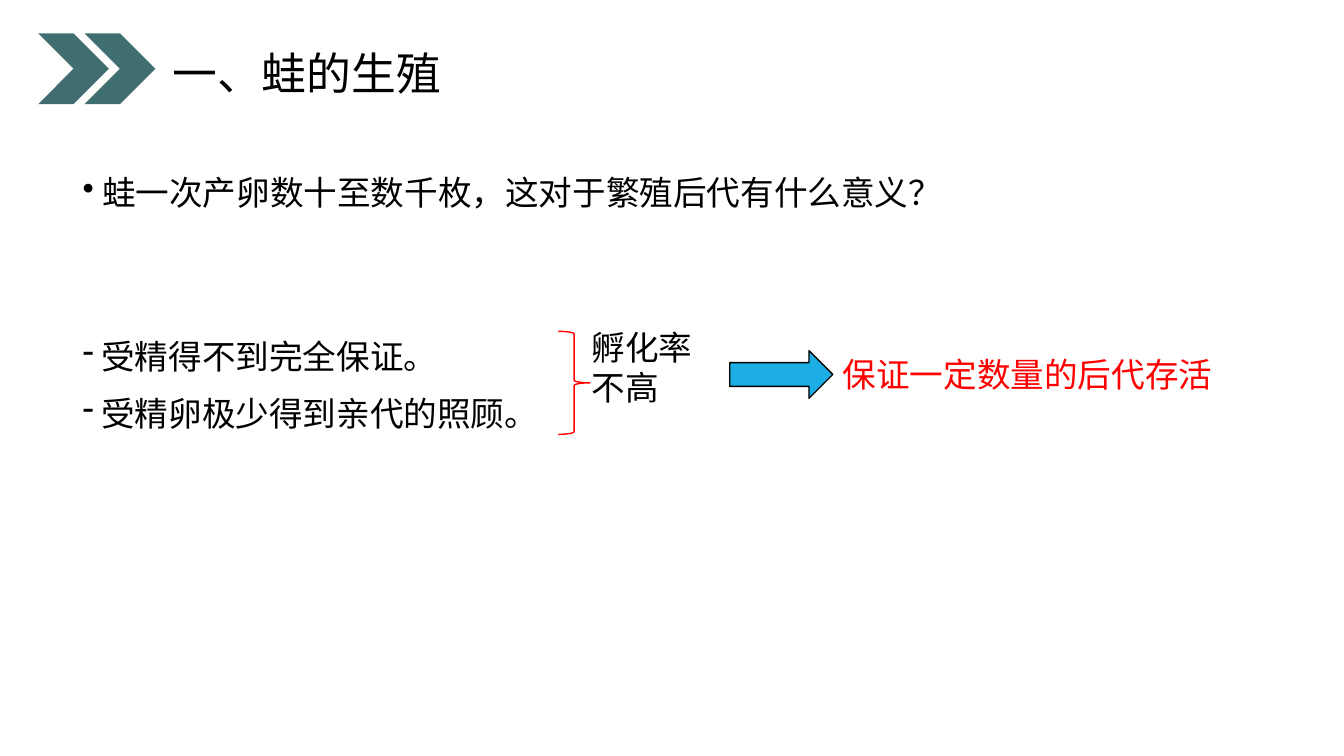
from lxml.etree import SubElement
from pptx import Presentation
from pptx.dml.color import RGBColor
from pptx.enum.shapes import MSO_SHAPE
from pptx.enum.text import MSO_AUTO_SIZE, PP_ALIGN
from pptx.oxml.ns import qn
from pptx.util import Pt

BLACK, RED, TEAL, BLUE = "000000", "FF0000", "416E71", "1CADE4"


def color(value):
    return RGBColor.from_string(value)


def add_outline(slide, kind, box, fill=None, line=None):
    """Add a preset shape; a missing fill or line stays empty."""
    shape = slide.shapes.add_shape(kind, *map(Pt, box))
    shape.shadow.inherit = False
    if fill:
        shape.fill.solid()
        shape.fill.fore_color.rgb = color(fill)
    else:
        shape.fill.background()
    if line:
        shape.line.color.rgb = color(line)
        shape.line.width = Pt(1)
    else:
        shape.line.fill.background()
    return shape


def add_text(slide, box, lines, size=24, ink=BLACK, bullet=None, gap=0, wrap=True):
    """Add one paragraph per line, with gap points between paragraphs."""
    frame = slide.shapes.add_textbox(*map(Pt, box)).text_frame
    frame.word_wrap = wrap
    frame.auto_size = MSO_AUTO_SIZE.SHAPE_TO_FIT_TEXT
    for index, line in enumerate(lines):
        paragraph = frame.add_paragraph() if index else frame.paragraphs[0]
        paragraph.alignment = PP_ALIGN.LEFT
        if index and gap:
            paragraph.space_before = Pt(gap)
        if bullet:
            SubElement(paragraph._p.get_or_add_pPr(), qn("a:buChar"), char=bullet)
        run = paragraph.add_run()
        run.text = line
        run.font.name = "Arial"
        run.font.size = Pt(size)
        run.font.color.rgb = color(ink)


def add_heading(slide, left, top):
    side, step = 50.6, 33.2
    for index in range(2):
        add_outline(slide, MSO_SHAPE.CHEVRON, (left + index * step, top, side, side), TEAL)
    add_text(slide, (left + 88.8, top + 5, 208, 46), ["一、蛙的生殖"], size=32, wrap=False)


def add_question(slide, left, top):
    add_text(slide, (left, top, 840, 36),
             [" 蛙一次产卵数十至数千枚，这对于繁殖后代有什么意义？"], bullet="•")


def add_reasoning(slide, left, top):
    """Causes, brace, effect, arrow and conclusion, from left to right."""
    add_text(slide, (left, top + 6.4, 452, 80),
             [" 受精得不到完全保证。", " 受精卵极少得到亲代的照顾。"], bullet="-", gap=12)
    brace = add_outline(slide, MSO_SHAPE.RIGHT_BRACE, (left + 346.8, top + 7, 22.6, 73.6), line=RED)
    brace.adjustments[0] = 0.084
    brace.adjustments[1] = 0.5
    add_text(slide, (left + 363.6, top, 89.3, 65.5), ["孵化率", "不高"], wrap=False)
    add_outline(slide, MSO_SHAPE.RIGHT_ARROW, (left + 469.3, top + 20.8, 73.6, 34), BLUE, BLACK)
    add_text(slide, (left + 542.9, top + 19.4, 360, 36), ["保证一定数量的后代存活"], ink=RED)


def main():
    deck = Presentation()
    deck.slide_width, deck.slide_height = Pt(960), Pt(540)
    slide = deck.slides.add_slide(deck.slide_layouts[6])
    add_heading(slide, 27.2, 23.8)
    add_question(slide, 52, 119.5)
    add_reasoning(slide, 52, 229.7)
    deck.save("out.pptx")


if __name__ == "__main__":
    main()
